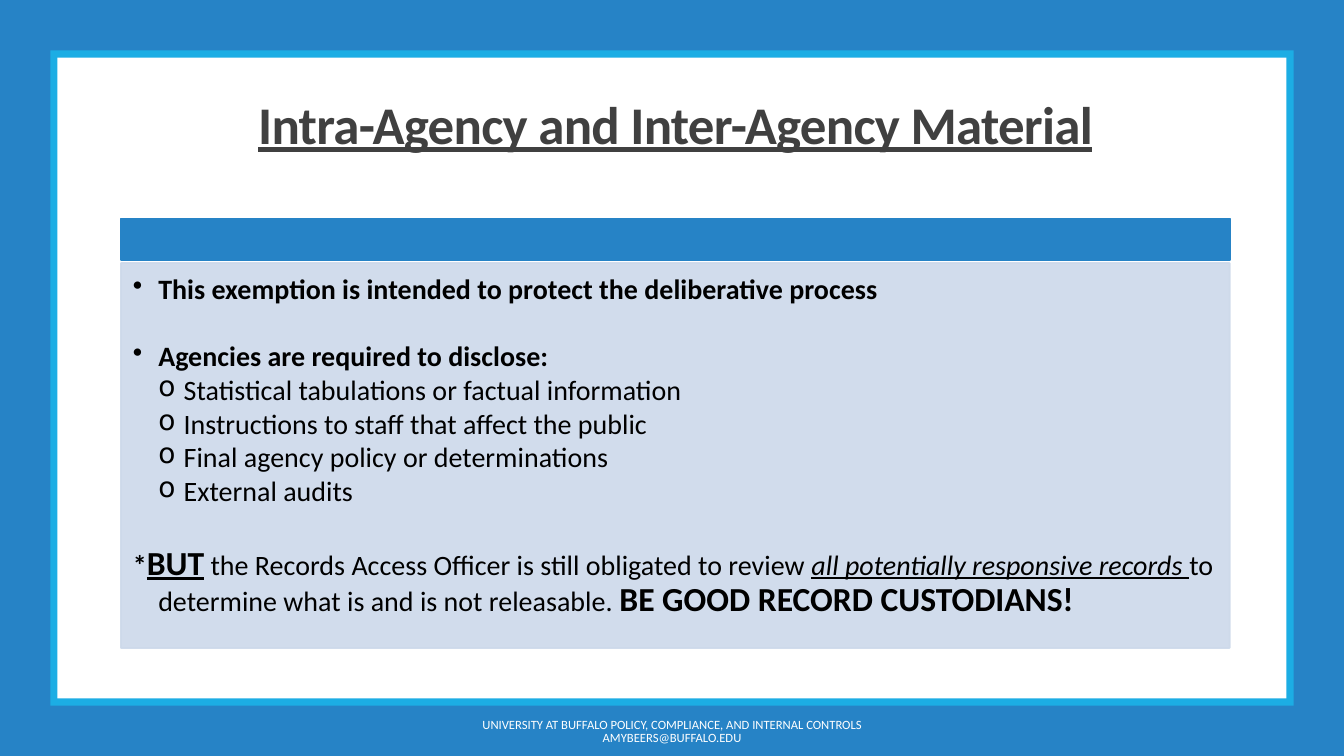
from lxml.etree import SubElement
from pptx import Presentation
from pptx.dml.color import RGBColor
from pptx.enum.shapes import MSO_SHAPE
from pptx.enum.text import MSO_ANCHOR, PP_ALIGN
from pptx.oxml.ns import qn
from pptx.util import Cm, Pt

# Content
COLOURS = {"blue": "2683C6", "cyan": "1CADE4", "white": "FFFFFF",
           "panel": "CDD9EA", "title": "404040", "black": "000000"}
TITLE = "Intra-Agency and Inter-Agency Material"
FOOTER = ("UNIVERSITY AT BUFFALO POLICY, COMPLIANCE, AND INTERNAL CONTROLS "
          "AMYBEERS@BUFFALO.EDU")
BOLD = {"bold": True}
LARGE = {"bold": True, "size": Pt(24)}
# Each paragraph: bullet, space after in points, spans of text and format
BODY = [
    ("•", 26.6, [("This exemption is intended to protect the deliberative process", BOLD)]),
    ("•", 2.5, [("Agencies are required to disclose:", BOLD)]),
    ("o", 2.5, [("Statistical tabulations or factual information", {})]),
    ("o", 2.5, [("Instructions to staff that affect the public", {})]),
    ("o", 2.5, [("Final agency policy or determinations", {})]),
    ("o", 27.5, [("External audits", {})]),
    (None, 0, [
        ("*", BOLD),
        ("BUT", {**LARGE, "underline": True}),
        (" ", BOLD),
        ("the Records Access Officer is still obligated to review ", {}),
        ("all potentially responsive records ", {"italic": True, "underline": True}),
        ("to determine what is and is not releasable. ", {}),
        ("BE GOOD RECORD CUSTODIANS!", LARGE),
    ]),
]

# Layout in centimetres
WIDTH, HEIGHT = 33.87, 19.05
FRAMES = [(0, "blue"), (1.27, "cyan"), (1.45, "white")]
LEFT, INNER_WIDTH = 3.05, 27.94
BAND_TOP, BAND_HEIGHT = 5.51, 1.04
PANEL_TOP, PANEL_HEIGHT = 6.63, 9.7
INDENT = 0.64

deck = Presentation()
deck.slide_width, deck.slide_height = Cm(WIDTH), Cm(HEIGHT)
page = deck.slides.add_slide(deck.slide_layouts[6])


def paint(fill, colour, opacity):
    fill.solid()
    fill.fore_color.rgb = RGBColor.from_string(COLOURS[colour])
    if opacity < 100:
        for tint in fill._xPr.iter(qn("a:srgbClr")):
            SubElement(tint, qn("a:alpha"), val=str(opacity * 1000))


def add_rectangle(left, top, width, height, colour, outlined=False, opacity=100):
    box = page.shapes.add_shape(MSO_SHAPE.RECTANGLE, *map(Cm, (left, top, width, height)))
    box.shadow.inherit = False
    paint(box.fill, colour, opacity)
    if outlined:
        box.line.width = Pt(1.25)
        paint(box.line.fill, colour, opacity)
    else:
        box.line.fill.background()
    return box


def set_frame(box, anchor, **margins):
    frame = box.text_frame
    frame.word_wrap = True
    frame.vertical_anchor = anchor
    for side, size in margins.items():
        setattr(frame, f"margin_{side}", Cm(size))
    return frame


def add_span(para, text, colour, **formats):
    span = para.add_run()
    span.text = text
    span.font.name = "Calibri"
    span.font.color.rgb = RGBColor.from_string(COLOURS[colour])
    for name, value in formats.items():
        setattr(span.font, name, value)
    return span


def add_centred_text(place, text, anchor, spacing, colour, formats, **margins):
    box = page.shapes.add_textbox(*map(Cm, place))
    para = set_frame(box, anchor, **margins).paragraphs[0]
    para.alignment = PP_ALIGN.CENTER
    para.line_spacing = spacing
    return add_span(para, text, colour, **formats)


# Nested frames that form the border
for inset, colour in FRAMES:
    add_rectangle(inset, inset, WIDTH - 2 * inset, HEIGHT - 2 * inset, colour)

# Footer and title
add_centred_text((10.24, 17.93, 13.39, 1.02), FOOTER, MSO_ANCHOR.MIDDLE, 0.9,
                 "white", {"size": Pt(9)})
heading = add_centred_text((LEFT, 2.41, INNER_WIDTH, 3.43), TITLE, MSO_ANCHOR.BOTTOM, 0.85,
                           "title", {"size": Pt(37.8), "bold": True, "underline": True},
                           bottom=1.93)
heading.font._element.set("spc", "-50")

# Blue band and text panel
add_rectangle(LEFT, BAND_TOP, INNER_WIDTH, BAND_HEIGHT, "blue", outlined=True)
panel = add_rectangle(LEFT, PANEL_TOP, INNER_WIDTH, PANEL_HEIGHT, "panel",
                      outlined=True, opacity=90)
frame = set_frame(panel, MSO_ANCHOR.TOP, left=0.3, top=0.3, right=0.35, bottom=0.43)
for number, (bullet, space_after, spans) in enumerate(BODY):
    para = frame.add_paragraph() if number else frame.paragraphs[0]
    level = 1 if bullet == "o" else 0
    properties = para._p.get_or_add_pPr()
    properties.set("marL", str(Cm(INDENT * (level + 1))))
    properties.set("indent", str(-Cm(INDENT)))
    if bullet:
        SubElement(properties, qn("a:buChar"), char=bullet)
    para_formats = {"level": level, "alignment": PP_ALIGN.LEFT,
                    "line_spacing": 0.9, "space_after": Pt(space_after)}
    for name, value in para_formats.items():
        setattr(para, name, value)
    for text, formats in spans:
        add_span(para, text, "black", **{"size": Pt(20), **formats})

deck.save("out.pptx")
